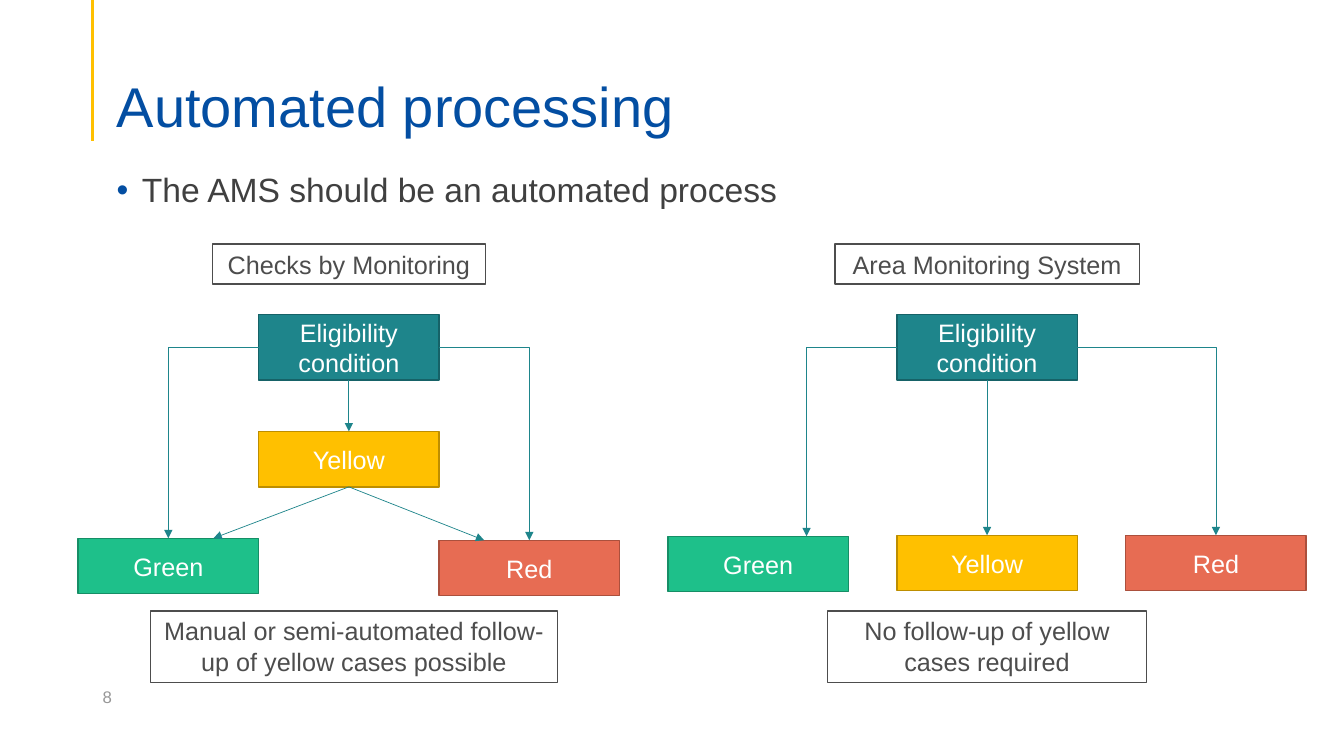
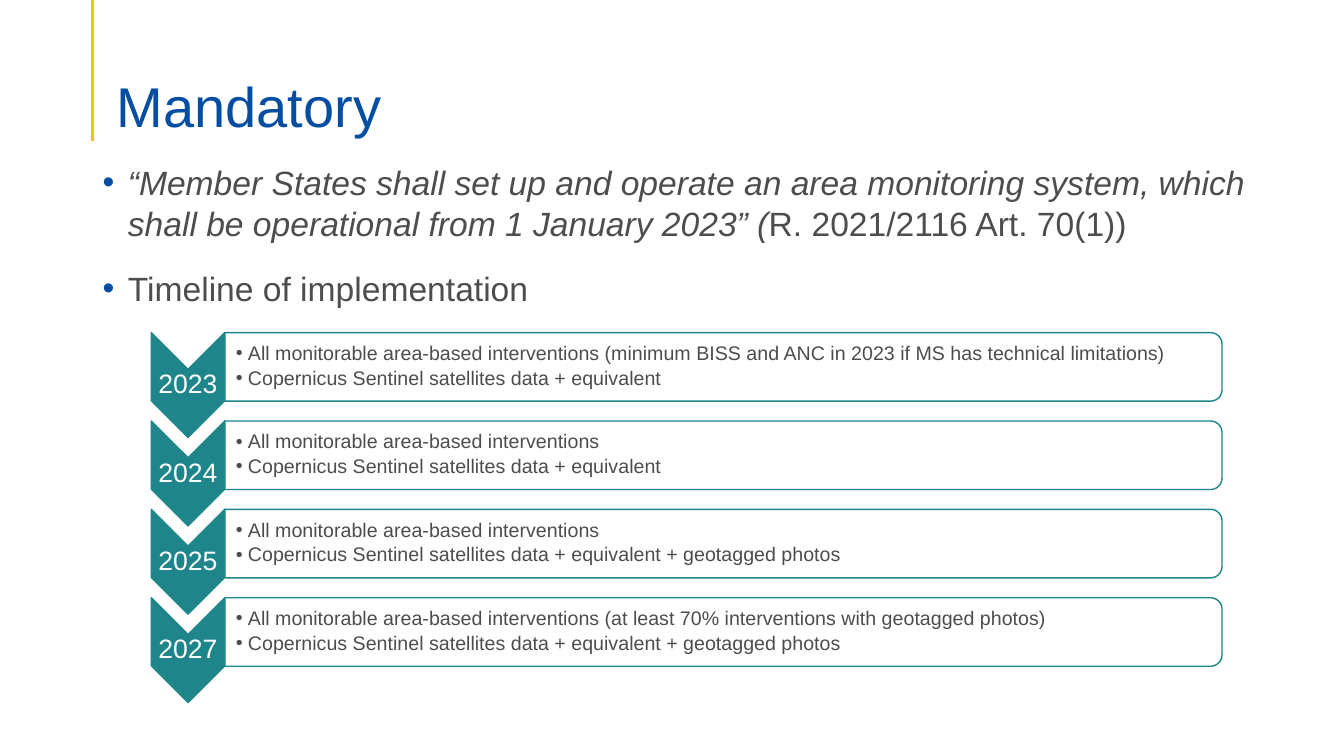
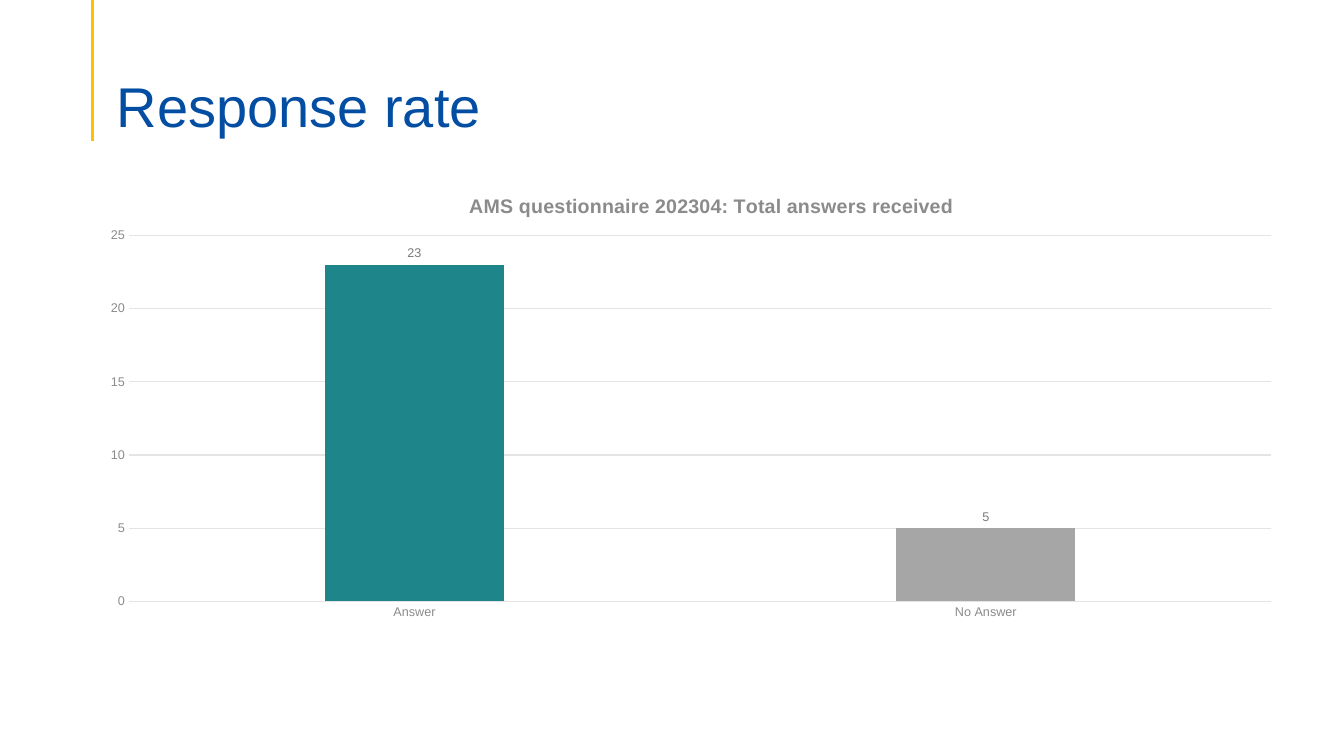
import pptx
import pptx.chart.data
import pptx.dml.color
import pptx.enum.chart
import pptx.enum.shapes
import pptx.enum.text
import pptx.oxml
import pptx.oxml.ns
import pptx.util
from lxml import etree

Inches = pptx.util.Inches
Pt = pptx.util.Pt
SHAPE = pptx.enum.shapes.MSO_SHAPE
CONNECTOR = pptx.enum.shapes.MSO_CONNECTOR
ANCHOR = pptx.enum.text.MSO_ANCHOR
ALIGN = pptx.enum.text.PP_ALIGN
qn = pptx.oxml.ns.qn

FONT = "Arial"
BLUE, GOLD, TEAL = "034EA2", "FFC000", "1E858B"
TEXT, DARK, WHITE = "4D4D4D", "404040", "FFFFFF"
PAGE_GREY, AXIS_GREY, GRID_GREY = "979797", "8B8B8B", "E4E4E4"
LABEL_GREY, BAR_GREY = "7A7A7A", "A6A6A6"
CONDITION = (TEAL, "166267")
GREEN = ("1EC08A", "168E66")
YELLOW = (GOLD, "BD8E00")
RED = ("E76C53", "AB503D")
BOX_WIDTH, BOX_HEIGHT = 1.79, 0.55


def colour(value):
    """Turn a hex string into a colour."""
    return pptx.dml.color.RGBColor.from_string(value)


def style_font(font, size, color):
    """Give a font the deck's typeface, a size and a colour."""
    font.name = FONT
    font.size = Pt(size)
    font.color.rgb = colour(color)


def write(shape, lines, size, color, anchor=ANCHOR.TOP, align=ALIGN.LEFT, margins=None):
    """Fill a shape with one paragraph per line."""
    frame = shape.text_frame
    frame.word_wrap = True
    frame.vertical_anchor = anchor
    if margins:
        (frame.margin_left, frame.margin_top,
         frame.margin_right, frame.margin_bottom) = map(Inches, margins)
    frame.text = "\n".join(lines)
    for para in frame.paragraphs:
        para.alignment = align
        for span in para.runs:
            style_font(span.font, size, color)
    return frame


def add_text(page, box, lines, size, color, **options):
    """Add a text box at left, top, width, height."""
    return write(page.shapes.add_textbox(*map(Inches, box)), lines, size, color, **options)


def add_bullets(frame, indent, after, color):
    """Bullet every paragraph with a hanging indent and space after."""
    for para in frame.paragraphs:
        props = para._p.get_or_add_pPr()
        props.set("marL", str(Inches(indent)))
        props.set("indent", str(-Inches(indent)))
        tint = etree.SubElement(props, qn("a:buClr"))
        etree.SubElement(tint, qn("a:srgbClr")).set("val", color)
        etree.SubElement(props, qn("a:buFont")).set("typeface", FONT)
        etree.SubElement(props, qn("a:buChar")).set("char", "•")
        para.space_after = Pt(after)


def add_block(page, kind, box, fill, line):
    """Add a flat preset shape with a one-point outline."""
    shape = page.shapes.add_shape(kind, *map(Inches, box))
    shape.shadow.inherit = False
    shape.fill.solid()
    shape.fill.fore_color.rgb = colour(fill)
    shape.line.color.rgb = colour(line)
    shape.line.width = Pt(1)
    return shape


def add_turned(page, kind, box, fill):
    """Add a teal-edged shape turned a quarter so that it covers the given box."""
    left, top, width, height = box
    shift = (width - height) / 2
    shape = add_block(page, kind, (left + shift, top - shift, height, width), fill, TEAL)
    shape.rotation = 90
    return shape


def add_line(page, start, end, color, width, kind=CONNECTOR.STRAIGHT):
    """Add a connector without a shadow."""
    line = page.shapes.add_connector(kind, *map(Inches, start + end))
    line.line.color.rgb = colour(color)
    line.line.width = Pt(width)
    etree.SubElement(line._element.spPr, qn("a:effectLst"))
    return line


def add_arrow(page, start, end, source, side, target=None, bent=False):
    """Add a thin arrow from a side of a box, joined to the target's top if given."""
    kind = CONNECTOR.ELBOW if bent else CONNECTOR.STRAIGHT
    arrow = add_line(page, start, end, TEAL, 0.5, kind)
    if bent:
        arrow._element.spPr.find(qn("a:prstGeom")).set("prst", "bentConnector2")
    arrow.begin_connect(source, side)
    if target is not None:
        arrow.end_connect(target, 0)
    outline = arrow.line._get_or_add_ln()
    etree.SubElement(outline, qn("a:tailEnd")).set("type", "triangle")


def add_page(deck, title):
    """Add a slide with the gold rule and the title."""
    page = deck.slides.add_slide(deck.slide_layouts[6])
    add_line(page, (0.92, 0), (0.92, 1.4), GOLD, 2.25)
    frame = add_text(page, (1.06, 0.53, 11.5, 0.86), [title], 40, BLUE,
                     anchor=ANCHOR.BOTTOM, margins=(0.1, 0.05, 0.1, 0))
    frame.paragraphs[0].line_spacing = 0.9
    return page


def add_body(page, box, lines, color):
    """Add the bulleted body text."""
    frame = add_text(page, box, lines, 24, color)
    add_bullets(frame, 0.25, 18, BLUE)
    return frame


def add_state(page, center, top, label, colors, height=BOX_HEIGHT):
    """Add one coloured flowchart box centred on a column."""
    box = (center - BOX_WIDTH / 2, top, BOX_WIDTH, height)
    shape = add_block(page, SHAPE.RECTANGLE, box, *colors)
    write(shape, [label], 18, WHITE, anchor=ANCHOR.MIDDLE, align=ALIGN.CENTER)
    return shape


def add_caption(page, center, top, width, height, label):
    """Add an outlined caption centred on a column."""
    box = (center - width / 2, top, width, height)
    shape = add_block(page, SHAPE.RECTANGLE, box, WHITE, TEXT)
    write(shape, [label], 18, TEXT, align=ALIGN.CENTER)


def draw_flow(page, center, heading, heading_width, note, note_center, note_width,
              green, yellow_top, red, follow_up):
    """Draw a traffic-light flow; green and red are (offset, top) from the centre."""
    top, height = 3.12, 0.65
    middle, half = top + height / 2, BOX_WIDTH / 2
    green_x, red_x = center + green[0], center + red[0]
    drop_x = center - BOX_WIDTH
    add_caption(page, center, 2.42, heading_width, 0.4, heading)
    condition = add_state(page, center, top, "Eligibility condition", CONDITION, height)
    green_box = add_state(page, green_x, green[1], "Green", GREEN)
    yellow_box = add_state(page, center, yellow_top, "Yellow", YELLOW)
    red_box = add_state(page, red_x, red[1], "Red", RED)
    add_arrow(page, (center, top + height), (center, yellow_top), condition, 2, yellow_box)
    add_arrow(page, (center - half, middle), (drop_x, green[1]), condition, 1,
              green_box if drop_x == green_x else None, bent=True)
    add_arrow(page, (center + half, middle), (red_x, red[1]), condition, 3,
              red_box, bent=True)
    if follow_up:
        start = (center, yellow_top + BOX_HEIGHT)
        add_arrow(page, start, (green_x + half / 2, green[1]), yellow_box, 2)
        add_arrow(page, start, (red_x - half / 2, red[1]), yellow_box, 2)
    add_caption(page, note_center, 6.06, note_width, 0.71, note)


def draw_timeline(page, box, rows):
    """Draw a column of year chevrons, each with a panel of points."""
    left, top, width, height = box
    year_width, chevron_height, panel_height = 0.73, 1.04, 0.68
    pitch = (height - chevron_height) / (len(rows) - 1)
    panel_left, panel_width = left + year_width, width - year_width
    margins = (0.01,) * 4
    for index, (year, points) in enumerate(rows):
        row_top = top + index * pitch
        add_turned(page, SHAPE.CHEVRON, (left, row_top, year_width, chevron_height), TEAL)
        frame = add_text(page, (left, row_top + year_width / 2, year_width, 0.31), [year],
                         19, WHITE, anchor=ANCHOR.MIDDLE, align=ALIGN.CENTER, margins=margins)
        frame.paragraphs[0].line_spacing = 0.9
        add_turned(page, SHAPE.ROUND_2_SAME_RECTANGLE,
                   (panel_left, row_top, panel_width, panel_height), WHITE)
        frame = add_text(page, (panel_left, row_top + 0.03, panel_width - 0.03, 0.61), points,
                         14, TEXT, anchor=ANCHOR.MIDDLE, margins=(0.11,) + margins[1:])
        add_bullets(frame, 0.12, 2.5, TEXT)
        for para in frame.paragraphs:
            para.line_spacing = 0.9


def place_part(element, **shares):
    """Place a chart part by shares of the chart's size."""
    layout = element.find(qn("c:layout"))
    if layout is None:
        layout = pptx.oxml.parse_xml(f"<c:layout {pptx.oxml.ns.nsdecls('c')}/>")
        element.insert(0, layout)
    manual = etree.SubElement(layout, qn("c:manualLayout"))
    if "w" in shares:
        etree.SubElement(manual, qn("c:layoutTarget")).set("val", "inner")
    for name in ("x", "y"):
        etree.SubElement(manual, qn(f"c:{name}Mode")).set("val", "edge")
    for name, share in shares.items():
        etree.SubElement(manual, qn(f"c:{name}")).set("val", str(share))


def draw_chart(page, box, title, categories, values):
    """Draw the column chart of answers."""
    data = pptx.chart.data.CategoryChartData()
    data.categories = categories
    data.add_series("Series 1", values)
    kind = pptx.enum.chart.XL_CHART_TYPE.COLUMN_CLUSTERED
    chart = page.shapes.add_chart(kind, *map(Inches, box), data).chart
    style_font(chart.font, 10, TEXT)
    chart.has_legend = False
    chart.has_title = True
    frame = chart.chart_title.text_frame
    frame.text = title
    style_font(frame.paragraphs[0].runs[0].font, 14, AXIS_GREY)
    chart.chart_title.include_in_layout = False
    place_part(chart.chart_title._element, x=0.31, y=0.04)
    place_part(chart._chartSpace.chart.plotArea, x=0.03, y=0.14, w=0.95, h=0.8)

    for axis in (chart.category_axis, chart.value_axis):
        style_font(axis.tick_labels.font, 9, AXIS_GREY)
        axis.major_tick_mark = pptx.enum.chart.XL_TICK_MARK.NONE
    chart.value_axis.format.line.fill.background()
    chart.value_axis.minimum_scale = 0
    chart.value_axis.maximum_scale = 25
    chart.value_axis.major_unit = 5
    for rule in (chart.category_axis.format.line,
                 chart.value_axis.major_gridlines.format.line):
        rule.color.rgb = colour(GRID_GREY)
        rule.width = Pt(0.75)

    plot = chart.plots[0]
    plot.vary_by_categories = False
    plot.gap_width = 219
    plot.overlap = -27
    series = plot.series[0]
    for target, color in ((series, TEAL), (series.points[1], BAR_GREY)):
        target.format.fill.solid()
        target.format.fill.fore_color.rgb = colour(color)
    labels = series.data_labels
    labels.show_value = True
    labels.position = pptx.enum.chart.XL_LABEL_POSITION.OUTSIDE_END
    style_font(labels.font, 9, LABEL_GREY)


def build_processing(deck):
    """Build the slide that compares the two flows."""
    page = add_page(deck, "Automated processing")
    add_text(page, (0.92, 6.71, 3, 0.4), ["8"], 12, PAGE_GREY, anchor=ANCHOR.MIDDLE)
    add_body(page, (1.06, 1.63, 11.5, 5.12), ["The AMS should be an automated process"], DARK)
    draw_flow(page, 3.46, "Checks by Monitoring", 2.71,
              "Manual or semi-automated follow-up of yellow cases possible", 3.51, 4.04,
              (-BOX_WIDTH, 5.34), 4.28, (BOX_WIDTH, 5.36), True)
    draw_flow(page, 9.79, "Area Monitoring System", 3.02,
              "No follow-up of yellow cases required", 9.79, 3.16,
              (-2.27, 5.32), 5.31, (2.27, 5.31), False)


def build_mandatory(deck):
    """Build the slide with the legal quote and the timeline."""
    page = add_page(deck, "Mandatory")
    quote = ("“Member States shall set up and operate an area monitoring system, which "
             "shall be operational from 1 January 2023” (")
    frame = add_body(page, (0.92, 1.56, 11.93, 4.68),
                     [quote, "Timeline of implementation"], TEXT)
    para = frame.paragraphs[0]
    para.runs[0].font.italic = True
    span = para.add_run()
    span.text = "R. 2021/2116 Art. 70(1))"
    style_font(span.font, 24, TEXT)
    scope = "All monitorable area-based interventions"
    sentinel = "Copernicus Sentinel satellites data + equivalent"
    photos = sentinel + " + geotagged photos"
    draw_timeline(page, (1.5, 3.3, 10.62, 3.67), [
        ("2023", [scope + " (minimum BISS and ANC in 2023 if MS has technical limitations)",
                  sentinel]),
        ("2024", [scope, sentinel]),
        ("2025", [scope, photos]),
        ("2027", [scope + " (at least 70% interventions with geotagged photos)", photos]),
    ])


def build_response(deck):
    """Build the slide with the response chart."""
    page = add_page(deck, "Response rate")
    draw_chart(page, (0.92, 1.7, 11.93, 4.54),
               "AMS questionnaire 202304: Total answers received",
               ["Answer", "No Answer"], (23, 5))


def main():
    """Build and save the deck."""
    deck = pptx.Presentation()
    deck.slide_width, deck.slide_height = Inches(13.33), Inches(7.5)
    build_processing(deck)
    build_mandatory(deck)
    build_response(deck)
    deck.save("out.pptx")


if __name__ == "__main__":
    main()
